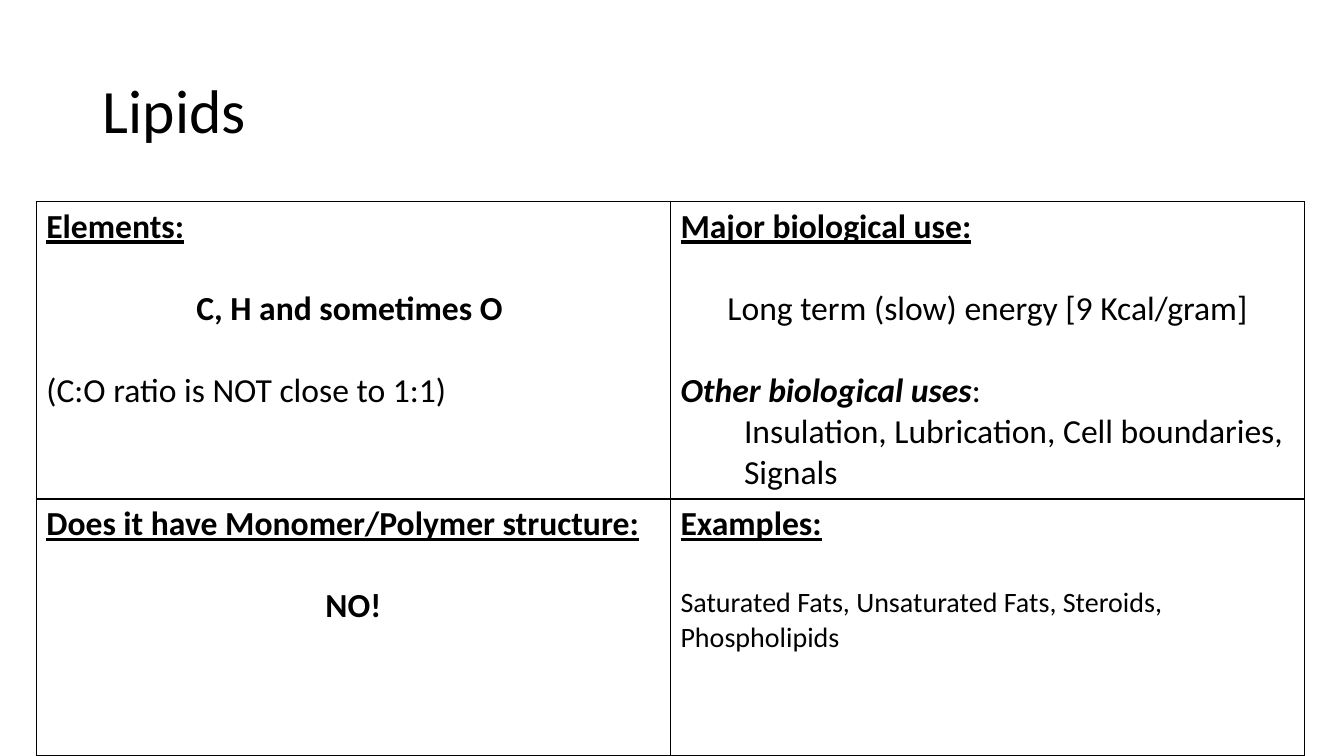
from lxml import etree
from pptx import Presentation
from pptx.dml.color import RGBColor
from pptx.enum.text import MSO_ANCHOR, PP_ALIGN
from pptx.oxml.ns import qn
from pptx.util import Inches, Pt

LEFT, CENTER = PP_ALIGN.LEFT, PP_ALIGN.CENTER
MIDDLE = MSO_ANCHOR.MIDDLE

COLORS = {"text": "000000", "border": "000000"}
FONT = "Calibri"
BODY_SIZE = 24
BLANK_LINE = 29.3
BORDER_WIDTH = 1

TITLE = "Lipids"
HEADING = {"bold": True, "underline": True}
BOLD = {"bold": True}
BOLD_ITALIC = {"bold": True, "italic": True}

# PLACEHOLDER
CELLS = [
    [
        [
            {"runs": [("Elements:", HEADING)]},
            {"runs": [("C, H and sometimes O ", BOLD)], "align": CENTER, "gap": BLANK_LINE},
            {"runs": [("(C:O ratio is NOT close to 1:1)", {})], "gap": BLANK_LINE},
        ],
        [
            {"runs": [("Major biological use:", HEADING)]},
            {"runs": [("Long term (slow) energy [9 Kcal/gram]", {})], "align": CENTER, "gap": BLANK_LINE},
            {"runs": [("Other biological uses", BOLD_ITALIC), (":", {})], "gap": BLANK_LINE},
            {"runs": [("Insulation, Lubrication, Cell boundaries, Signals", {})], "indent": 0.63},
        ],
    ],
    [
        [
            {"runs": [("Does it have Monomer/Polymer structure:", HEADING)]},
            {"runs": [("NO!", BOLD)], "align": CENTER, "gap": BLANK_LINE},
        ],
        [
            {"runs": [("Examples:", HEADING)]},
            {"runs": [("Saturated Fats, Unsaturated Fats, Steroids, Phospholipids", {"size": 20})],
             "gap": BLANK_LINE},
        ],
    ],
]
COL_WIDTH = 6.29
ROW_HEIGHTS = [2.95, 2.55]


def add_run(p, text, size=BODY_SIZE, bold=False, italic=False, underline=False):
    r = p.add_run()
    r.text = text
    r.font.name = FONT
    r.font.size = Pt(size)
    r.font.bold = bold
    r.font.italic = italic
    r.font.underline = underline
    r.font.color.rgb = RGBColor.from_string(COLORS["text"])


def add_borders(cell):
    tc_pr = cell._tc.get_or_add_tcPr()
    for side in ("a:lnL", "a:lnR", "a:lnT", "a:lnB"):
        line = etree.SubElement(tc_pr, qn(side), w=str(Pt(BORDER_WIDTH)))
        fill = etree.SubElement(line, qn("a:solidFill"))
        etree.SubElement(fill, qn("a:srgbClr"), val=COLORS["border"])


def fill_cell(cell, paragraphs):
    add_borders(cell)
    cell.fill.background()
    tf = cell.text_frame
    for i, item in enumerate(paragraphs):
        p = tf.paragraphs[0] if i == 0 else tf.add_paragraph()
        p.alignment = item.get("align", LEFT)
        p.space_before = Pt(item.get("gap", 0))
        if "indent" in item:
            p._p.get_or_add_pPr().set("marL", str(Inches(item["indent"])))
        for text, style in item["runs"]:
            add_run(p, text, **style)


def main():
    prs = Presentation()
    prs.slide_width, prs.slide_height = Inches(13.33), Inches(7.5)
    s = prs.slides.add_slide(prs.slide_layouts[5])

    title = s.shapes.title
    title.left, title.top = Inches(0.92), Inches(0.4)
    title.width, title.height = Inches(11.5), Inches(1.45)
    tf = title.text_frame
    tf.vertical_anchor = MIDDLE
    p = tf.paragraphs[0]
    p.alignment = LEFT
    p.line_spacing = 0.9
    add_run(p, TITLE, size=44)

    cols = len(CELLS[0])
    table = s.shapes.add_table(
        len(CELLS), cols, Inches(0.36), Inches(2),
        Inches(COL_WIDTH * cols), Inches(sum(ROW_HEIGHTS))).table
    table.first_row = False
    table.horz_banding = False
    for col in table.columns:
        col.width = Inches(COL_WIDTH)
    for row, height, contents in zip(table.rows, ROW_HEIGHTS, CELLS):
        row.height = Inches(height)
        for cell, paragraphs in zip(row.cells, contents):
            fill_cell(cell, paragraphs)

    prs.save("out.pptx")


if __name__ == "__main__":
    main()
